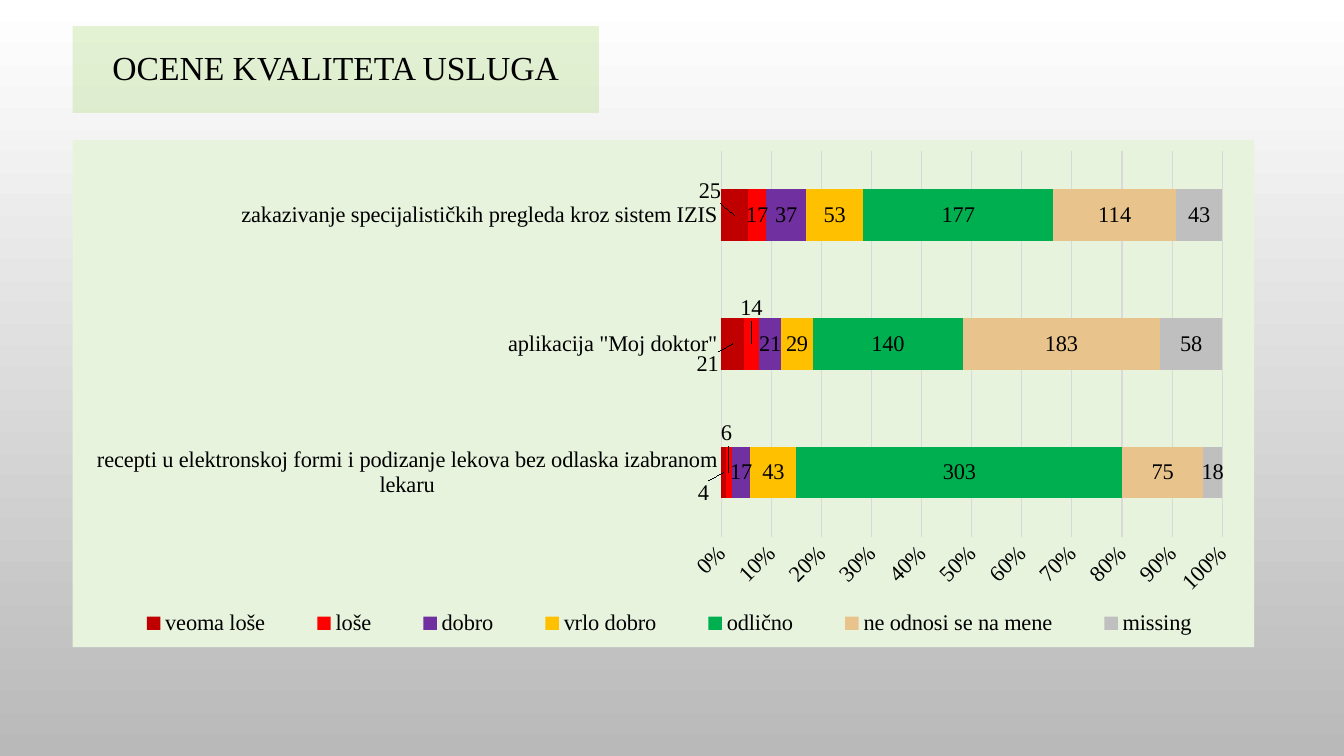
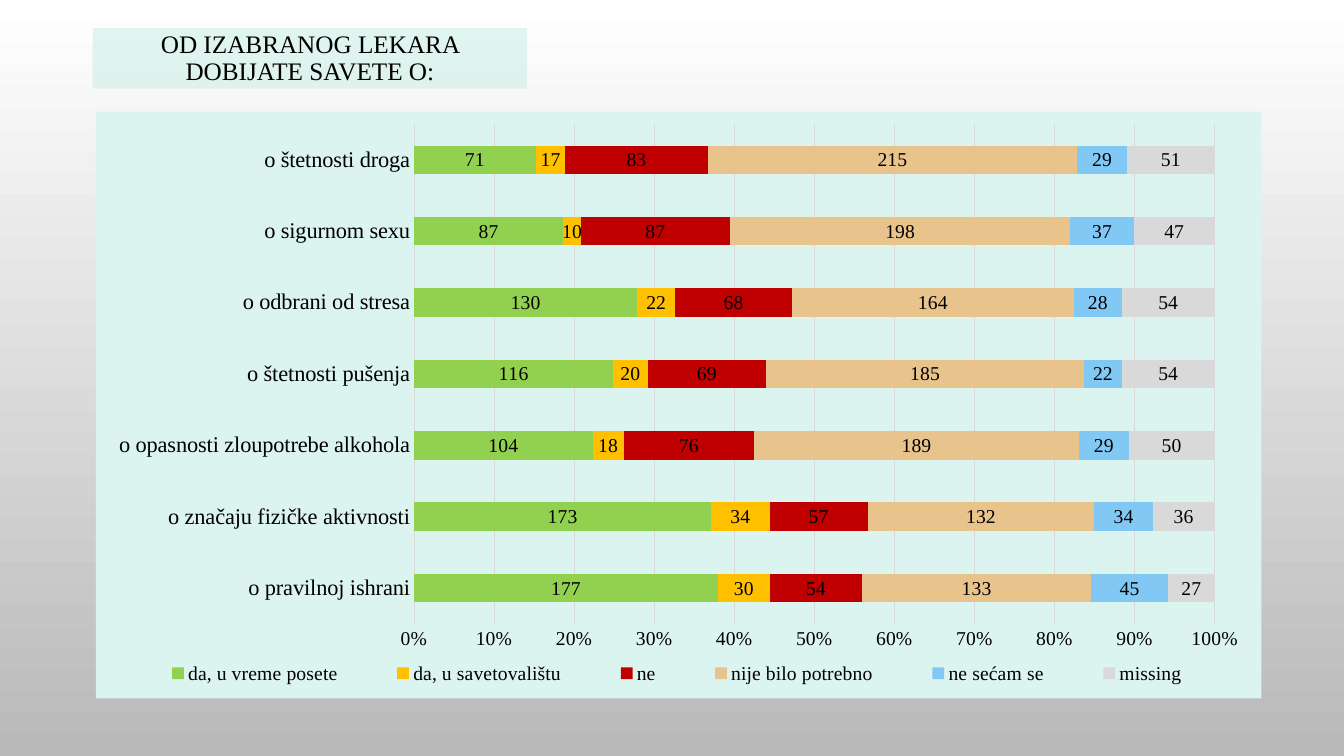
from dataclasses import dataclass

from lxml import etree
from pptx import Presentation
from pptx import util as u
from pptx.chart.data import CategoryChartData
from pptx.dml.color import RGBColor
from pptx.enum import chart as ch
from pptx.enum import text
from pptx.oxml import parse_xml
from pptx.oxml.ns import nsdecls, qn


@dataclass(frozen=True)
class Theme:
    """Colours and type shared by the slides."""
    font: str = "Times New Roman"
    ink: str = "000000"
    grid: str = "D9D9D9"
    back: tuple = ("FFFFFF", "B9B9B9")
    dark_red: str = "C00000"
    red: str = "FF0000"
    purple: str = "7030A0"
    amber: str = "FFC000"
    green: str = "00B050"
    lime: str = "92D050"
    sand: str = "E8C48C"
    sky: str = "82C8F5"
    grey: str = "BFBFBF"
    mint: str = "B7EADE"
    lime_panel: str = "E7F3DD"
    mint_panel: str = "DBF4EF"
    hairline: float = 0.75
    title: int = 24
    small_title: int = 18
    label: int = 16
    small_label: int = 14


T = Theme()
WIDTH, HEIGHT = u.Inches(13.33), u.Inches(7.5)


def rgb(code):
    """Turn a hex code into a colour."""
    return RGBColor.from_string(code)


def frame(box):
    """Turn left, top, width and height in percent of the slide into lengths."""
    return [int(share * side / 100) for share, side in zip(box, (WIDTH, HEIGHT) * 2)]


def set_font(font, size):
    """Give a font the deck's face and colour."""
    font.name, font.size, font.bold = T.font, u.Pt(size), False
    font.color.rgb = rgb(T.ink)


def set_line(line):
    """Draw a line as a grid hairline."""
    line.color.rgb = rgb(T.grid)
    line.width = u.Pt(T.hairline)


def set_layout(parent, index, values, modes=()):
    """Place a chart part by percent of the chart's size."""
    for old in parent.findall(qn("c:layout")):
        parent.remove(old)
    layout = etree.Element(qn("c:layout"))
    manual = etree.SubElement(layout, qn("c:manualLayout"))
    for tag, value in modes:
        etree.SubElement(manual, qn("c:" + tag), val=value)
    for tag, value in zip("xywh", values):
        etree.SubElement(manual, qn("c:" + tag), val=f"{value / 100:.4f}")
    parent.insert(index, layout)


def add_title(s, box, words, size, color, alpha):
    """Write the title on its tinted band."""
    sp = s.shapes.title
    sp.left, sp.top, sp.width, sp.height = frame(box)
    sp.fill.solid()
    sp.fill.fore_color.rgb = rgb(color)
    tint = sp._element.spPr.find(".//" + qn("a:srgbClr"))
    etree.SubElement(tint, qn("a:alpha"), val=str(alpha * 1000))
    tf = sp.text_frame
    tf.text = words
    tf.word_wrap = True
    tf.auto_size = text.MSO_AUTO_SIZE.NONE
    tf.vertical_anchor = text.MSO_ANCHOR.MIDDLE
    p = tf.paragraphs[0]
    p.alignment, p.line_spacing = text.PP_ALIGN.CENTER, 0.9
    set_font(p.font, size)


def style_axes(chart, size, turn):
    """Format the category and percent axes."""
    cat, val = chart.category_axis, chart.value_axis
    for axis, points in ((cat, T.label), (val, size)):
        axis.major_tick_mark = axis.minor_tick_mark = ch.XL_TICK_MARK.NONE
        set_font(axis.tick_labels.font, points)
    cat.has_major_gridlines = False
    set_line(cat.format.line)
    val.has_major_gridlines = True
    set_line(val.major_gridlines.format.line)
    val.format.line.fill.background()
    val.major_unit = 0.1
    val.tick_labels.number_format = "0%"
    val.tick_labels.number_format_is_linked = False
    val._element.find(qn("c:txPr")).find(qn("a:bodyPr")).set("rot", str(turn * 60000))


def style_series(ser, color, size, shifts):
    """Colour a series and label it, moving the labels that need room."""
    ser.format.fill.solid()
    ser.format.fill.fore_color.rgb = rgb(color)
    labels = ser.data_labels
    labels.show_value = True
    labels.position = ch.XL_LABEL_POSITION.CENTER
    set_font(labels.font, size)
    for i, shift in enumerate(shifts):
        label = ser.points[i].data_label
        label.position = ch.XL_LABEL_POSITION.CENTER
        set_font(label.font, size)
        set_layout(label._dLbl, 1, shift)


def add_bars(s, box, cats, series, size, panel, plot_box, legend_box, turn=0, shifts=None):
    """Add a full-width stacked bar chart on a tinted panel."""
    data = CategoryChartData()
    data.categories = cats
    for name, _, values in series:
        data.add_series(name, values)
    chart = s.shapes.add_chart(ch.XL_CHART_TYPE.BAR_STACKED_100, *frame(box), data).chart
    set_font(chart.font, size)
    chart.has_title = False
    chart._chartSpace.find(qn("c:chart")).addnext(parse_xml(
        f'<c:spPr {nsdecls("c", "a")}><a:solidFill><a:srgbClr val="{panel}"/></a:solidFill>'
        "<a:ln><a:noFill/></a:ln></c:spPr>"))
    plot = chart.plots[0]
    plot.gap_width, plot.overlap, plot.vary_by_categories = 150, 100, False
    style_axes(chart, size, turn)
    for ser, (name, color, _) in zip(plot.series, series):
        style_series(ser, color, size, (shifts or {}).get(name, ()))
    chart.has_legend = True
    legend = chart.legend
    legend.position = ch.XL_LEGEND_POSITION.BOTTOM
    legend.include_in_layout = False
    set_font(legend.font, size)
    edges = [("xMode", "edge"), ("yMode", "edge")]
    set_layout(legend._element, 1, legend_box, edges)
    plot_area = chart._chartSpace.find(".//" + qn("c:plotArea"))
    set_layout(plot_area, 0, plot_box, [("layoutTarget", "inner")] + edges)


def quality_slide(s):
    """Build the slide on service ratings."""
    add_title(s, (5.4, 3.47, 39.16, 11.47), "OCENE KVALITETA USLUGA", T.title, T.lime, 24)
    cats = ["recepti u elektronskoj formi i podizanje lekova bez odlaska izabranom lekaru",
            'aplikacija "Moj doktor"',
            "zakazivanje specijalističkih pregleda kroz sistem IZIS"]
    series = [("veoma loše", T.dark_red, (4, 21, 25)),
              ("loše", T.red, (6, 14, 17)),
              ("dobro", T.purple, (17, 21, 37)),
              ("vrlo dobro", T.amber, (43, 29, 53)),
              ("odlično", T.green, (303, 140, 177)),
              ("ne odnosi se na mene", T.sand, (75, 183, 114)),
              ("missing", T.grey, (18, 58, 43))]
    shifts = {"veoma loše": [(-1.7, 4), (-2.1, 4), (-2.1, -4.7)],
              "loše": [(-0.2, -7.7), (0, -7)]}
    add_bars(s, (5.4, 18.53, 87.92, 67.07), cats, series, T.label, T.lime_panel,
             (54.9, 2.1, 42.4, 76.2), (2.5, 91.3, 96, 8), -45, shifts)


def advice_slide(s):
    """Build the slide on advice from the chosen doctor."""
    add_title(s, (6.9, 3.73, 32.33, 8), "OD IZABRANOG LEKARA DOBIJATE SAVETE O:",
              T.small_title, T.mint, 40)
    cats = ["o pravilnoj ishrani", "o značaju fizičke aktivnosti",
            "o opasnosti zloupotrebe alkohola", "o štetnosti pušenja",
            "o odbrani od stresa", "o sigurnom sexu", "o štetnosti droga"]
    series = [("da, u vreme posete", T.lime, (177, 173, 104, 116, 130, 87, 71)),
              ("da, u savetovalištu", T.amber, (30, 34, 18, 20, 22, 10, 17)),
              ("ne", T.dark_red, (54, 57, 76, 69, 68, 87, 83)),
              ("nije bilo potrebno", T.sand, (133, 132, 189, 185, 164, 198, 215)),
              ("ne sećam se", T.sky, (45, 34, 29, 22, 28, 37, 29)),
              ("missing", T.grid, (27, 36, 50, 54, 54, 47, 51))]
    add_bars(s, (7.13, 14.8, 86.72, 77.6), cats, series, T.small_label, T.mint_panel,
             (27.3, 2.1, 68.7, 85.2), (2, 92.3, 95.7, 6.8))


def main():
    """Build and save the deck."""
    prs = Presentation()
    prs.slide_width, prs.slide_height = WIDTH, HEIGHT
    fill = prs.slide_master.background.fill
    fill.gradient()
    fill.gradient_angle = 270
    for stop, color, position in zip(fill.gradient_stops, T.back, (0, 1)):
        stop.color.rgb = rgb(color)
        stop.position = position
    for build in (quality_slide, advice_slide):
        build(prs.slides.add_slide(prs.slide_layouts[5]))
    prs.save("out.pptx")


if __name__ == "__main__":
    main()
